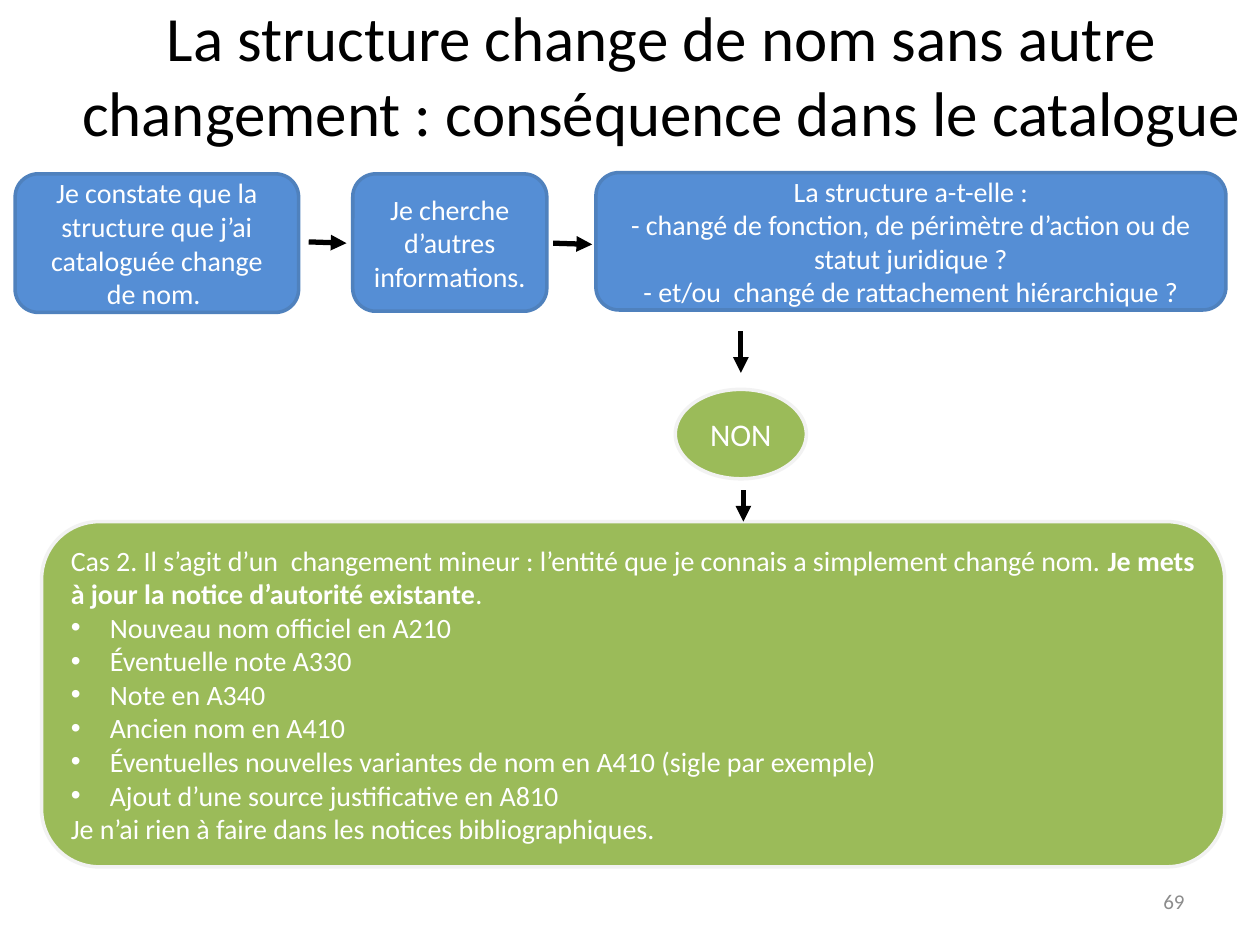
import pptx
import pptx.dml.color
import pptx.enum.shapes
import pptx.enum.text
import pptx.oxml.ns
import pptx.util
from lxml import etree
from pptx.util import Inches

SHAPE = pptx.enum.shapes.MSO_SHAPE
ALIGN = pptx.enum.text.PP_ALIGN
ANCHOR = pptx.enum.text.MSO_ANCHOR
BLUE = {"fill": "558ED5", "edge": "4F81BD"}
GREEN = {"fill": "9BBB59", "edge": "F2F2F2"}


def color(value):
    """Turn a hex string into a colour."""
    return pptx.dml.color.RGBColor.from_string(value)


def apply(target, values):
    """Set each named attribute on the target."""
    for name, value in values.items():
        setattr(target, name, value)


def add_xml(parent, tag, **attributes):
    """Append a DrawingML element to the parent."""
    etree.SubElement(parent, pptx.oxml.ns.qn(tag), attributes)


class SlideBuilder:
    """Hold the style and the current slide."""

    font = "Calibri"

    def __init__(self, deck):
        """Add a title-only slide to the deck."""
        self.slide = deck.slides.add_slide(deck.slide_layouts[5])

    def set_text(self, shape, paragraphs, size, ink, align):
        """Fill a shape with paragraphs of (text, bold) spans."""
        frame = shape.text_frame
        apply(frame, {"word_wrap": True, "vertical_anchor": ANCHOR.MIDDLE,
                      "auto_size": pptx.enum.text.MSO_AUTO_SIZE.NONE})
        for index, spans in enumerate(paragraphs):
            para = frame.add_paragraph() if index else frame.paragraphs[0]
            para.alignment = align
            for text, bold in [(spans, False)] if isinstance(spans, str) else spans:
                span = para.add_run()
                span.text = text
                apply(span.font, {"name": self.font, "size": pptx.util.Pt(size), "bold": bold})
                span.font.color.rgb = color(ink)
        return frame

    def title(self, area, text):
        """Place and format the slide title."""
        shape = self.slide.shapes.title
        apply(shape, dict(zip(("left", "top", "width", "height"), map(Inches, area))))
        self.set_text(shape, [text], 36, "000000", ALIGN.CENTER)

    def label(self, area, text):
        """Add a small right-aligned grey text."""
        box = self.slide.shapes.add_textbox(*map(Inches, area))
        self.set_text(box, [text], 12, "8C8C8C", ALIGN.RIGHT)

    def box(self, kind, area, paragraphs, look, size=16, align=ALIGN.CENTER):
        """Add a filled shape with white text."""
        shape = self.slide.shapes.add_shape(kind, *map(Inches, area))
        shape.shadow.inherit = False
        shape.fill.solid()
        shape.fill.fore_color.rgb = color(look["fill"])
        shape.line.color.rgb = color(look["edge"])
        shape.line.width = pptx.util.Pt(2)
        return self.set_text(shape, paragraphs, size, "FFFFFF", align)

    def bullet(self, para):
        """Give a paragraph a hanging round bullet."""
        properties = para._p.get_or_add_pPr()
        properties.set("marL", str(Inches(0.31)))
        properties.set("indent", str(Inches(-0.31)))
        add_xml(properties, "a:buFont", typeface="Arial")
        add_xml(properties, "a:buChar", char="•")

    def arrow(self, start, end):
        """Add a black line with an arrowhead at its end."""
        connector = self.slide.shapes.add_connector(
            pptx.enum.shapes.MSO_CONNECTOR.STRAIGHT, *map(Inches, (*start, *end)))
        connector.line.color.rgb = color("000000")
        connector.line.width = pptx.util.Pt(3)
        add_xml(connector.get_or_add_ln(), "a:tailEnd", type="triangle")
        add_xml(connector._element.spPr, "a:effectLst")


def main():
    """Build the decision slide and save it."""
    deck = pptx.Presentation()
    apply(deck, {"slide_width": Inches(10), "slide_height": Inches(7.5)})
    page = SlideBuilder(deck)
    page.title((0.5, -0.04, 9.5, 1.25),
               "La structure change de nom sans autre changement : conséquence dans le catalogue")
    page.label((7.17, 6.95, 2.33, 0.4), "69")

    steps = [
        ((0.12, 1.38, 2.25, 1.1),
         ["Je constate que la structure que j’ai cataloguée change de nom. "]),
        ((2.8, 1.38, 1.54, 1.09), ["Je cherche d’autres informations. "]),
        ((4.73, 1.37, 5, 1.09),
         ["La structure a-t-elle :",
          "- changé de fonction, de périmètre d’action ou de statut juridique ?",
          "- et/ou  changé de rattachement hiérarchique ?"]),
    ]
    for area, paragraphs in steps:
        page.box(SHAPE.ROUNDED_RECTANGLE, area, paragraphs, BLUE)
    page.box(SHAPE.OVAL, (5.36, 3.09, 1.04, 0.71), ["NON"], GREEN, size=18)

    introduction = [
        ("Cas 2. Il s’agit d’un  changement mineur : l’entité que je connais "
         "a simplement changé nom.", False),
        (" Je mets à jour la notice d’autorité existante", True),
        (".", False),
    ]
    updates = [
        "Nouveau nom officiel en A210",
        "Éventuelle note A330",
        "Note en A340",
        "Ancien nom en A410",
        "Éventuelles nouvelles variantes de nom en A410 (sigle par exemple)",
        "Ajout d’une source justificative en A810",
    ]
    conclusion = "Je n’ai rien à faire dans les notices bibliographiques."
    frame = page.box(SHAPE.ROUNDED_RECTANGLE, (0.33, 4.14, 9.39, 2.74),
                     [introduction, *updates, conclusion], GREEN, align=ALIGN.LEFT)
    for para in frame.paragraphs[1:-1]:
        page.bullet(para)

    for start, end in [((2.45, 1.92), (2.75, 1.93)), ((4.39, 1.93), (4.7, 1.94)),
                       ((5.88, 2.63), (5.88, 2.96)), ((5.9, 3.89), (5.9, 4.14))]:
        page.arrow(start, end)
    deck.save("out.pptx")


if __name__ == "__main__":
    main()
